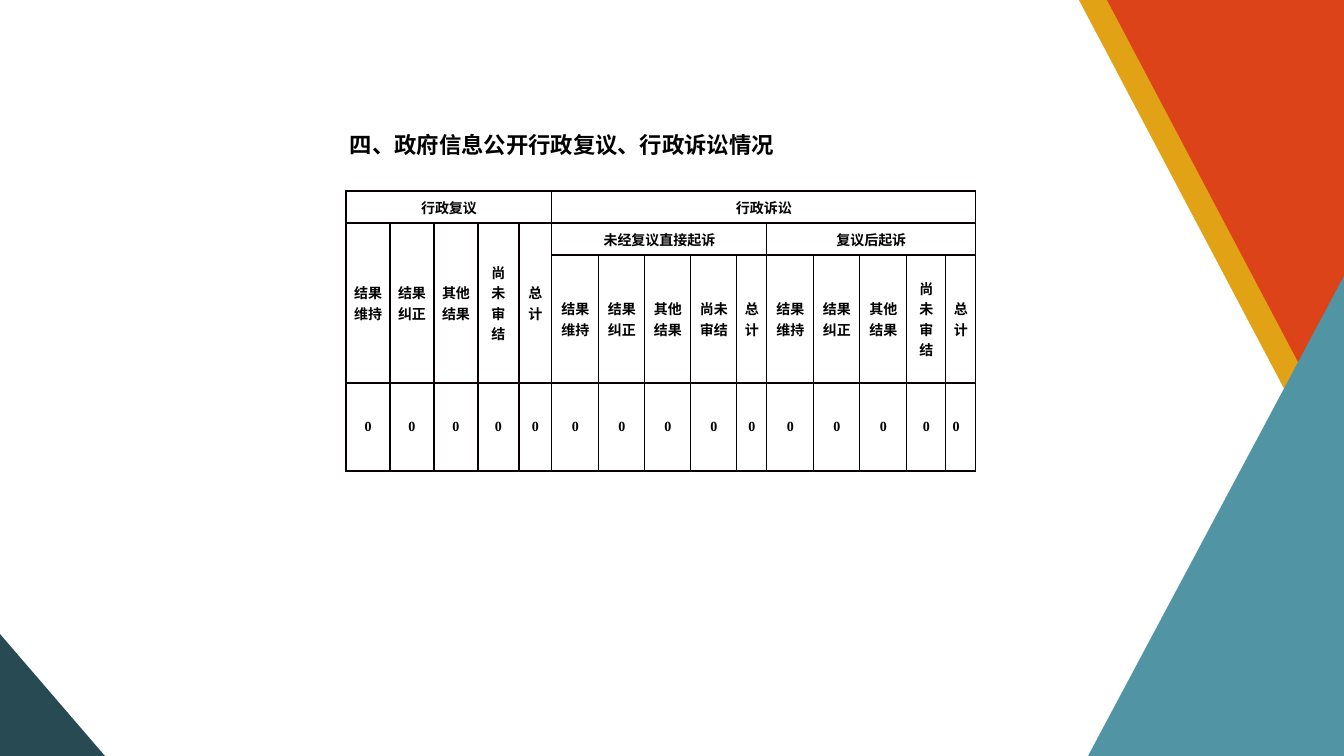
from pptx import Presentation
from pptx.dml.color import RGBColor
from pptx.enum.text import MSO_ANCHOR as Anchor, PP_ALIGN as Align
from pptx.oxml import parse_xml
from pptx.oxml.ns import nsdecls
from pptx.util import Pt

SCALE = 914400 / 100.8
COLORS = {
    "gold": "E1A215",
    "red": "DD4319",
    "teal": "5195A5",
    "slate": "284A52",
    "ink": "000000",
    "border": "080000",
}
TRIANGLES = [
    ("gold", [(1316, 449), (1316, 0), (1079, 0)]),
    ("red", [(1344, 449), (1344, 0), (1107, 0)]),
    ("teal", [(1344, 276), (1344, 756), (1088, 756)]),
    ("slate", [(0, 634), (0, 756), (105, 756)]),
]
COLUMNS = [44, 44, 44, 41, 33, 47, 46, 46, 46, 30, 47, 46, 47, 39, 30]
ROWS = [32, 32, 128, 88]
OUTCOMES = ["结果维持", "结果纠正", "其他结果", "尚未审结", "总计"]
RESULTS = ["0"] * len(COLUMNS)


def px(length):
    return round(length * SCALE)


def apply(target, values):
    for name, value in values.items():
        setattr(target, name, value)


class SlideBuilder:
    def __init__(self, deck):
        self.slide = deck.slides.add_slide(deck.slide_layouts[6])
        self.shapes = self.slide.shapes

    def color(self, name):
        return RGBColor.from_string(COLORS[name])

    def triangle(self, color, points):
        outline = self.shapes.build_freeform(*points[0], scale=SCALE)
        outline.add_line_segments(points[1:], close=True)
        shape = outline.convert_to_shape()
        shape.shadow.inherit = False
        shape.fill.solid()
        shape.fill.fore_color.rgb = self.color(color)
        shape.line.fill.background()

    def add_text(self, para, text, font, size, align):
        para.alignment = align
        span = para.add_run()
        span.text = text
        apply(span.font, {"name": font, "size": Pt(size), "bold": True})
        span.font.color.rgb = self.color("ink")

    def title(self, text, left, top, width, height, indent):
        box = self.shapes.add_textbox(px(left), px(top), px(width), px(height))
        frame = box.text_frame
        apply(frame, {"word_wrap": True, "vertical_anchor": Anchor.MIDDLE})
        para = frame.paragraphs[0]
        self.add_text(para, text, "Arial", 16, Align.LEFT)
        para._p.get_or_add_pPr().set("indent", str(px(indent)))

    def table(self, left, top, columns, rows):
        frame = self.shapes.add_table(
            len(rows), len(columns), px(left), px(top), px(sum(columns)), px(sum(rows))
        )
        grid = frame.table
        apply(grid, {"first_row": False, "horz_banding": False})
        for column, width in zip(grid.columns, columns):
            column.width = px(width)
        for row, height in zip(grid.rows, rows):
            row.height = px(height)
        for cell in grid.iter_cells():
            self.style_cell(cell)
        return grid

    def style_cell(self, cell):
        apply(cell, {
            "margin_left": px(7),
            "margin_right": px(7),
            "margin_top": 0,
            "margin_bottom": 0,
            "vertical_anchor": Anchor.MIDDLE,
        })
        cell.fill.background()
        properties = cell._tc.get_or_add_tcPr()
        for order, side in enumerate("LRTB"):
            properties.insert(order, parse_xml(
                f'<a:ln{side} {nsdecls("a")} w="{Pt(1)}"><a:solidFill>'
                f'<a:srgbClr val="{COLORS["border"]}"/></a:solidFill></a:ln{side}>'
            ))

    def cell(self, grid, row, column, text, row_span=1, column_span=1, align=Align.CENTER):
        cell = grid.cell(row, column)
        if row_span * column_span > 1:
            cell.merge(grid.cell(row + row_span - 1, column + column_span - 1))
        para = cell.text_frame.paragraphs[0]
        self.add_text(para, text, "Times New Roman", 10, align)


def main():
    deck = Presentation()
    apply(deck, {"slide_width": px(1344), "slide_height": px(756)})
    page = SlideBuilder(deck)
    for color, points in TRIANGLES:
        page.triangle(color, points)
    page.title("四、政府信息公开行政复议、行政诉讼情况", 295, 126, 569, 37, 45)

    grid = page.table(346, 191, COLUMNS, ROWS)
    group = len(OUTCOMES)
    page.cell(grid, 0, 0, "行政复议", column_span=group)
    page.cell(grid, 0, group, "行政诉讼", column_span=2 * group)
    page.cell(grid, 1, group, "未经复议直接起诉", column_span=group)
    page.cell(grid, 1, 2 * group, "复议后起诉", column_span=group)
    for column, result in enumerate(RESULTS):
        outcome = OUTCOMES[column % group]
        if column < group:
            page.cell(grid, 1, column, outcome, row_span=2)
        else:
            page.cell(grid, 2, column, outcome)
        last = column == len(RESULTS) - 1
        page.cell(grid, 3, column, result, align=Align.LEFT if last else Align.CENTER)
    deck.save("out.pptx")


if __name__ == "__main__":
    main()
